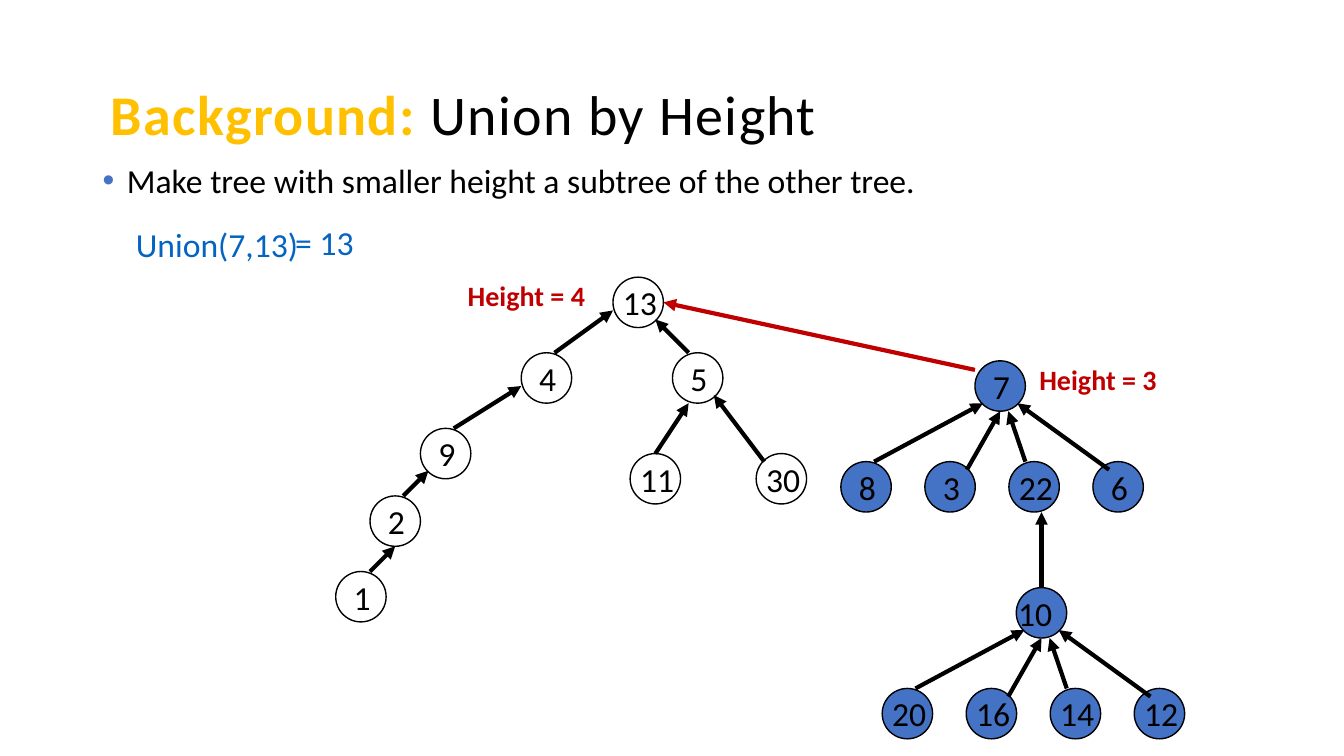
from lxml import etree
from pptx import Presentation
from pptx.dml.color import RGBColor
from pptx.enum.shapes import MSO_CONNECTOR, MSO_SHAPE
from pptx.enum.text import MSO_ANCHOR
from pptx.oxml.ns import qn
from pptx.util import Inches, Pt

ELLIPSE = MSO_SHAPE.OVAL
STRAIGHT = MSO_CONNECTOR.STRAIGHT
TOP, BOTTOM = MSO_ANCHOR.TOP, MSO_ANCHOR.BOTTOM
FONT = "Calibri"
BLACK, WHITE, BLUE = "000000", "FFFFFF", "4472C4"
RED, GOLD, LINK_BLUE = "C00000", "FFC000", "0563C1"
NODE_SIZE = 0.5

prs = Presentation()
prs.slide_width, prs.slide_height = Inches(13.33), Inches(7.5)
s = prs.slides.add_slide(prs.slide_layouts[6])
rgb = RGBColor.from_string


def add_text(runs, x, y, w, h, size=24, line_spacing=None, anchor=TOP,
             bullet=None, spacing=None):
    """Add a one-paragraph text box; runs holds (text, colour, bold) tuples."""
    tf = s.shapes.add_textbox(Inches(x), Inches(y), Inches(w), Inches(h)).text_frame
    tf.word_wrap = True
    tf.vertical_anchor = anchor
    p = tf.paragraphs[0]
    if line_spacing:
        p.line_spacing = line_spacing
    if bullet:
        pPr = p._p.get_or_add_pPr()
        pPr.set("marL", str(Inches(0.24)))
        pPr.set("indent", str(-Inches(0.24)))
        colour = etree.SubElement(pPr, qn("a:buClr"))
        etree.SubElement(colour, qn("a:srgbClr"), val=bullet)
        etree.SubElement(pPr, qn("a:buFont"), typeface="Arial")
        etree.SubElement(pPr, qn("a:buChar"), char="•")
    for text, colour, bold in runs:
        r = p.add_run()
        r.text = text
        r.font.name, r.font.size, r.font.bold = FONT, Pt(size), bold
        r.font.color.rgb = rgb(colour)
        if spacing:
            r.font._element.set("spc", str(spacing))


def add_arrow(x1, y1, x2, y2, colour=BLACK):
    """Draw an arrow from child (x2, y2) up to parent (x1, y1)."""
    line = s.shapes.add_connector(STRAIGHT, Inches(x1), Inches(y1),
                                  Inches(x2), Inches(y2))
    line.line.color.rgb = rgb(colour)
    line.line.width = Pt(3)
    etree.SubElement(line.line._get_or_add_ln(), qn("a:headEnd"), type="triangle")
    etree.SubElement(line._element.spPr, qn("a:effectLst"))


add_text([("Make tree with smaller height a subtree of the other tree.", BLACK, False)],
         0.92, 1.58, 9.75, 1.38, line_spacing=0.9, bullet=BLUE)
add_arrow(6.58, 3, 9.67, 3.67, RED)

# label, left, top, fill, label offset, label width
nodes = [
    ("13", 6.08, 2.75, WHITE, 0, 0.58),
    ("4", 5.17, 3.5, WHITE, 0.08, 0.33),
    ("5", 6.67, 3.5, WHITE, 0.08, 0.33),
    ("9", 4.17, 4.25, WHITE, 0.08, 0.33),
    ("11", 6.25, 4.5, WHITE, 0, 0.75),
    ("30", 7.5, 4.5, WHITE, 0, 0.83),
    ("2", 3.67, 4.92, WHITE, 0.08, 0.33),
    ("1", 3.33, 5.67, WHITE, 0.08, 0.33),
]
arrows = [
    (6.08, 3.08, 5.5, 3.5),
    (5.17, 3.83, 4.5, 4.25),
    (6.5, 3.17, 6.83, 3.5),
    (4.25, 4.67, 4, 4.92),
    (6.83, 4, 6.5, 4.5),
    (7.08, 3.92, 7.58, 4.58),
    (3.92, 5.42, 3.67, 5.67),
    (10.33, 5.08, 10.33, 5.83),
]

# Each blue parent has four children in a row one inch below it
fans = [
    ("7", 9.67, 3.58, 0.08, 0.33,
     [("8", 0.08, 0.33), ("3", 0.08, 0.75), ("22", 0, 0.83), ("6", 0.08, 0.33)]),
    ("10", 10.08, 5.83, -0.08, 0.75,
     [("20", 0, 0.75), ("16", 0, 0.75), ("14", 0, 0.83), ("12", 0, 0.58)]),
]
fan_arrows = [(0.08, 0.42, -1, 1), (0.25, 0.5, -0.08, 1.08),
              (0.33, 0.5, 0.5, 1), (0.42, 0.42, 1.33, 1.08)]
for parent, x, y, offset, width, children in fans:
    nodes.append((parent, x, y, BLUE, offset, width))
    for i, (child, child_offset, child_width) in enumerate(children):
        nodes.append((child, x - 1.33 + i * 2.5 / 3, y + 1, BLUE,
                      child_offset, child_width))
    arrows += [(x + x1, y + y1, x + x2, y + y2) for x1, y1, x2, y2 in fan_arrows]

for label, x, y, fill, offset, width in nodes:
    sp = s.shapes.add_shape(ELLIPSE, Inches(x), Inches(y),
                            Inches(NODE_SIZE), Inches(NODE_SIZE))
    sp.shadow.inherit = False
    if fill == WHITE:
        sp.fill.background()
    else:
        sp.fill.solid()
        sp.fill.fore_color.rgb = rgb(fill)
    sp.line.color.rgb = rgb(BLACK)
    sp.line.width = Pt(1)
    add_text([(label, BLACK, False)], x + offset, y, width, NODE_SIZE)

for ends in arrows:
    add_arrow(*ends)

for text, x, y in (("Height = 4", 4.54, 2.75), ("Height = 3", 10.21, 3.58)):
    add_text([(text, RED, True)], x, y, 1.96, 0.51, size=20, line_spacing=0.9)

add_text([("Background: ", GOLD, True), ("Union by Height", BLACK, False)],
         1, 0.5, 9.51, 1, size=40, line_spacing=0.8, anchor=BOTTOM, spacing=100)
add_text([("= 13", LINK_BLUE, False)], 2.83, 2.15, 1.17, 0.91)
add_text([("Union(7,13)", LINK_BLUE, False)], 1.25, 2.17, 2, 0.5)

prs.save("out.pptx")
